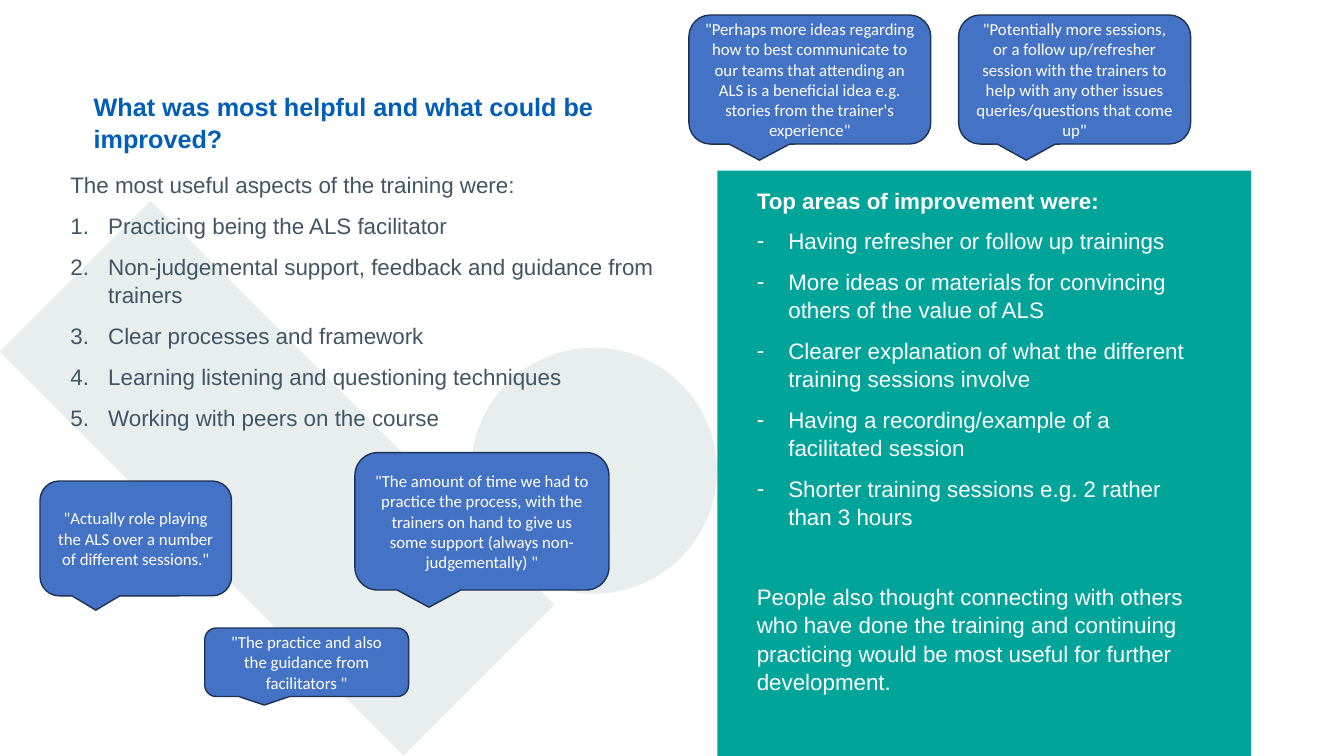
"""Build the slide on what helped and what could be improved in the training."""
from lxml.etree import SubElement
from pptx import Presentation
from pptx.dml.color import RGBColor
from pptx.enum.shapes import MSO_SHAPE
from pptx.enum.text import MSO_ANCHOR, PP_ALIGN
from pptx.oxml.ns import qn
from pptx.util import Pt

PALE = RGBColor(0xE8, 0xED, 0xEE)
TEAL = RGBColor(0x00, 0xA4, 0x99)
SLATE = RGBColor(0x42, 0x55, 0x63)
NAVY = RGBColor(0x00, 0x5E, 0xB8)
BLUE = RGBColor(0x44, 0x72, 0xC4)
EDGE = RGBColor(0x1E, 0x32, 0x56)
WHITE = RGBColor(0xFF, 0xFF, 0xFF)

TITLE = "What was most helpful and what could be improved?"
LEAD = "The most useful aspects of the training were:"
USEFUL = [
    "Practicing being the ALS facilitator",
    "Non-judgemental support, feedback and guidance from trainers",
    "Clear processes and framework",
    "Learning listening and questioning techniques",
    "Working with peers on the course",
]
HEAD = "Top areas of improvement were:"
IMPROVE = [
    "Having refresher or follow up trainings",
    "More ideas or materials for convincing others of the value of ALS",
    "Clearer explanation of what the different training sessions involve",
    "Having a recording/example of a facilitated session",
    "Shorter training sessions e.g. 2 rather than 3 hours",
]
CLOSE = ("People also thought connecting with others who have done the training and "
         "continuing practicing would be most useful for further development.")
QUOTES = [
    ((28.6, 343.6, 136.8, 82), '"Actually role playing the ALS over a number of different sessions."'),
    ((253.5, 323.3, 181.5, 98.2), '"The amount of time we had to practice the process, with the '
     'trainers\u00a0on hand to give us some support (always non-judgementally) "'),
    ((492.1, 10.7, 172.8, 92.2), '"Perhaps more ideas regarding how to best communicate to our teams '
     "that attending an ALS is a beneficial idea e.g. stories from the trainer's experience\""),
    ((684.7, 10.7, 165.8, 92.2), '"Potentially more sessions, or a follow up/refresher session with '
     'the trainers to help with any other issues queries/questions that come up"'),
    ((146.3, 448.6, 145.6, 48.9), '"The practice and also the guidance from facilitators "'),
]
SHAPES = [
    (MSO_SHAPE.OVAL, (336.4, 248.4, 175.7, 175.7), PALE, 0),
    (MSO_SHAPE.RECTANGLE, (121.7, 137.5, 152.6, 408.2), PALE, 315),
    (MSO_SHAPE.RECTANGLE, (512.4, 121.8, 381.3, 418.2), TEAL, 0),
]


def draw(slide, kind, box, fill, turn=0):
    shape = slide.shapes.add_shape(kind, *map(Pt, box))
    shape.shadow.inherit = False
    shape.fill.solid()
    shape.fill.fore_color.rgb = fill
    shape.line.fill.background()
    shape.rotation = turn
    return shape


def style(run, size, color, name="Arial", bold=False):
    font = run.font
    font.size, font.name, font.bold = Pt(size), name, bold
    font.color.rgb = color


def mark(para, tag, attrs, indent):
    props = para._p.get_or_add_pPr()
    props.set("marL", str(Pt(indent)))
    props.set("indent", str(-Pt(indent)))
    face = SubElement(props, qn("a:buFont"))
    face.set("typeface", "Arial")
    bullet = SubElement(props, qn(tag))
    for key, value in attrs.items():
        bullet.set(key, value)


def write(slide, box, rows, size, color):
    frame = slide.shapes.add_textbox(*map(Pt, box)).text_frame
    frame.word_wrap = True
    for num, (text, bold, bullet, before) in enumerate(rows):
        para = frame.add_paragraph() if num else frame.paragraphs[0]
        if bullet:
            mark(para, *bullet)
        para.line_spacing = 1.05
        para.space_before, para.space_after = Pt(before), Pt(9)
        run = para.add_run()
        run.text = text
        style(run, size, color, bold=bold)


def quote(slide, box, text):
    shape = draw(slide, MSO_SHAPE.ROUNDED_RECTANGULAR_CALLOUT, box, BLUE)
    shape.line.color.rgb = EDGE
    shape.line.width = Pt(1)
    frame = shape.text_frame
    frame.word_wrap = True
    frame.vertical_anchor = MSO_ANCHOR.MIDDLE
    para = frame.paragraphs[0]
    para.alignment = PP_ALIGN.CENTER
    run = para.add_run()
    run.text = text
    style(run, 12, WHITE, "Calibri")


def main():
    deck = Presentation()
    deck.slide_width, deck.slide_height = Pt(960), Pt(540)
    slide = deck.slides.add_slide(deck.slide_layouts[6])
    for item in SHAPES:
        draw(slide, *item)
    count = ("a:buAutoNum", {"type": "arabicPeriod"}, 27)
    dash = ("a:buChar", {"char": "-"}, 22.5)
    useful = [(LEAD, False, None, 0)] + [(text, False, count, 0) for text in USEFUL]
    better = [(HEAD, True, None, 0)] + [(text, False, dash, 0) for text in IMPROVE]
    better.append((CLOSE, False, None, 28))
    write(slide, (43.2, 118.1, 437, 392), useful, 16, SLATE)
    write(slide, (59.8, 60.5, 378, 57.6), [(TITLE, True, None, 0)], 18, NAVY)
    write(slide, (533.5, 128.9, 334, 392), better, 16, WHITE)
    for box, text in QUOTES:
        quote(slide, box, text)
    deck.save("out.pptx")


if __name__ == "__main__":
    main()
